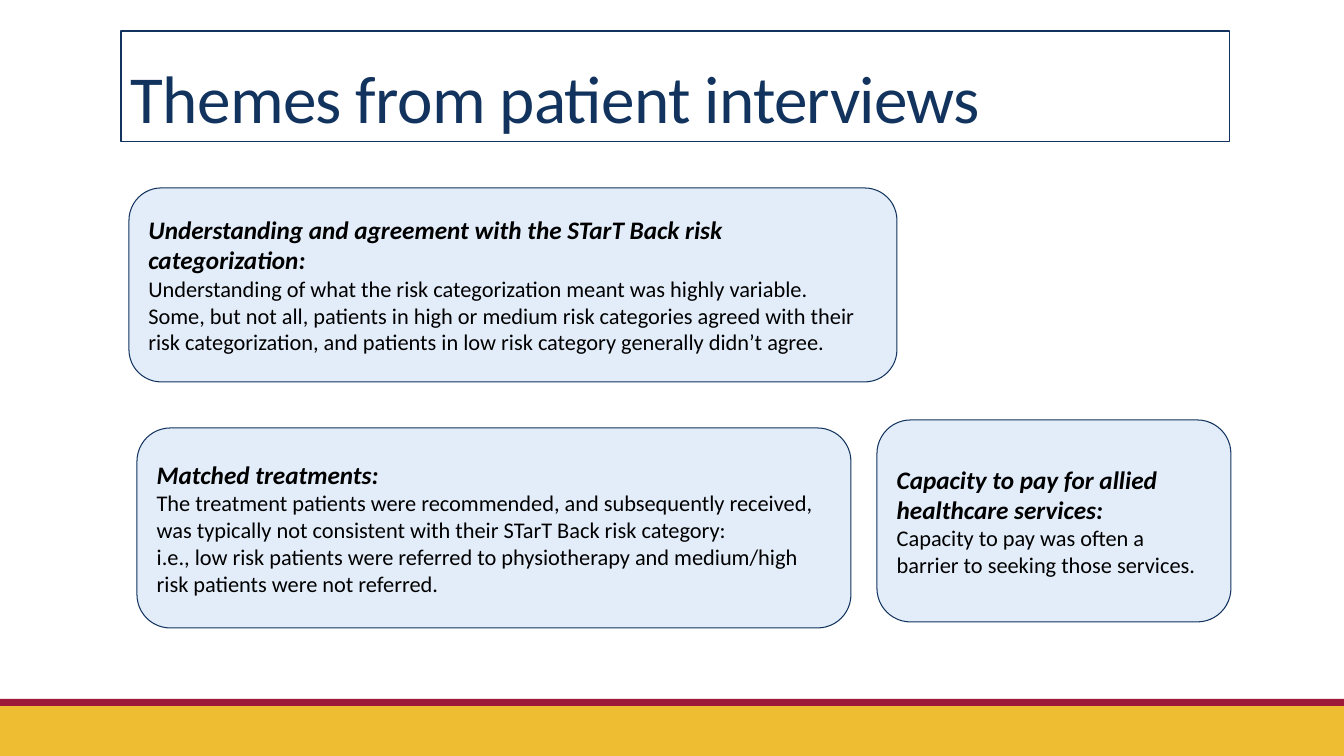
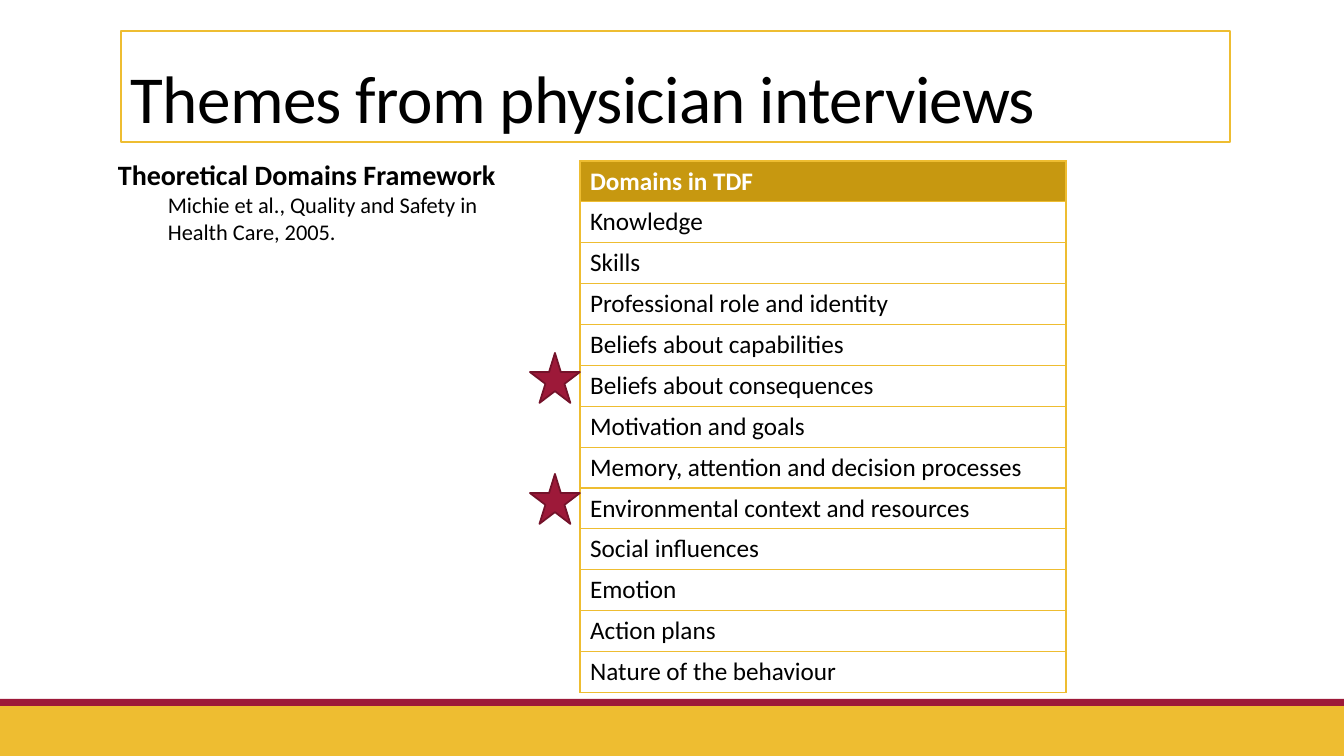
"""Build two slides on the themes from patient and physician interviews."""
from lxml.etree import SubElement
from pptx import Presentation
from pptx.dml.color import RGBColor
from pptx.enum.shapes import MSO_SHAPE
from pptx.enum.text import MSO_ANCHOR, PP_ALIGN
from pptx.oxml.ns import qn
from pptx.util import Emu, Pt

PX = 914400 / 100.8
SLIDE_WIDTH, SLIDE_HEIGHT = 1344, 756
FONT = "Calibri"
GOLD = RGBColor(0xEE, 0xBD, 0x31)
DARK_GOLD = RGBColor(0xC7, 0x98, 0x10)
MAROON = RGBColor(0x9D, 0x19, 0x39)
DARK_MAROON = RGBColor(0x74, 0x12, 0x2A)
NAVY = RGBColor(0x11, 0x33, 0x5D)
PALE_BLUE = RGBColor(0xBB, 0xD4, 0xF3)
BLACK = RGBColor(0, 0, 0)
WHITE = RGBColor(0xFF, 0xFF, 0xFF)

THEMES = [
    ((129, 188, 768, 194), [
        "Understanding and agreement with the STarT Back risk categorization:",
        "Understanding of what the risk categorization meant was highly variable.",
        "Some, but not all, patients in high or medium risk categories agreed with their "
        "risk categorization, and patients in low risk category generally didn’t agree.",
    ]),
    ((137, 428, 714, 200), [
        "Matched treatments:",
        "The treatment patients were recommended, and subsequently received, "
        "was typically not consistent with their STarT Back risk category:",
        "i.e., low risk patients were referred to physiotherapy and medium/high "
        "risk patients were not referred.",
    ]),
    ((877, 420, 354, 202), [
        "Capacity to pay for allied healthcare services:",
        "Capacity to pay was often a barrier to seeking those services.",
    ]),
]
DOMAINS = [
    "Domains in TDF",
    "Knowledge",
    "Skills",
    "Professional role and identity",
    "Beliefs about capabilities",
    "Beliefs about consequences",
    "Motivation and goals",
    "Memory, attention and decision processes",
    "Environmental context and resources",
    "Social influences",
    "Emotion",
    "Action plans",
    "Nature of the behaviour",
]
REFERENCE = [
    "Theoretical Domains Framework",
    "Michie et al., Quality and Safety in Health Care, 2005.",
]


def add_shape(slide, preset, place, fill=None, line=None, line_width=0.75):
    """Add a preset shape; without a colour, the fill or line is left out."""
    shape = slide.shapes.add_shape(preset, *[Emu(round(length * PX)) for length in place])
    shape.shadow.inherit = False
    if fill is None:
        shape.fill.background()
    else:
        shape.fill.solid()
        shape.fill.fore_color.rgb = fill
    if line is None:
        shape.line.fill.background()
    else:
        shape.line.color.rgb = line
        shape.line.width = Pt(line_width)
    return shape


def add_titled_slide(title, text_color, line, line_width):
    """Add a slide with the footer bands and a framed title."""
    slide = presentation.slides.add_slide(presentation.slide_layouts[6])
    add_shape(slide, MSO_SHAPE.RECTANGLE, (0, 706, SLIDE_WIDTH, 50), GOLD)
    add_shape(slide, MSO_SHAPE.RECTANGLE, (0, 699, SLIDE_WIDTH, 7), MAROON)
    frame = add_shape(slide, MSO_SHAPE.RECTANGLE, (121, 31, 1109, 111), None, line, line_width)
    frame.text_frame.word_wrap = True
    frame.text_frame.vertical_anchor = MSO_ANCHOR.BOTTOM
    paragraph = frame.text_frame.paragraphs[0]
    paragraph.text = title
    paragraph.alignment = PP_ALIGN.LEFT
    paragraph.line_spacing = 0.85
    paragraph.font.name = FONT
    paragraph.font.size = Pt(48)
    paragraph.font.color.rgb = text_color
    paragraph.runs[0]._r.get_or_add_rPr().set("spc", "-50")
    return slide


presentation = Presentation()
presentation.slide_width = Emu(round(SLIDE_WIDTH * PX))
presentation.slide_height = Emu(round(SLIDE_HEIGHT * PX))

patient_slide = add_titled_slide("Themes from patient interviews", NAVY, NAVY, 0.75)
for place, texts in THEMES:
    card = add_shape(patient_slide, MSO_SHAPE.ROUNDED_RECTANGLE, place, PALE_BLUE, NAVY)
    fill_color = card._element.spPr.find(qn("a:solidFill")).find(qn("a:srgbClr"))
    SubElement(fill_color, qn("a:alpha"), val="40000")
    card.text_frame.word_wrap = True
    card.text_frame.vertical_anchor = MSO_ANCHOR.MIDDLE
    card.text_frame.text = "\n".join(texts)
    for index, paragraph in enumerate(card.text_frame.paragraphs):
        paragraph.alignment = PP_ALIGN.LEFT
        paragraph.font.name = FONT
        paragraph.font.size = Pt(18 if index == 0 else 16)
        paragraph.font.bold = paragraph.font.italic = index == 0
        paragraph.font.color.rgb = BLACK

physician_slide = add_titled_slide("Themes from physician interviews", BLACK, GOLD, 1.25)
table_place = [Emu(round(length * PX)) for length in (580, 161, 486, 40 * len(DOMAINS))]
table = physician_slide.shapes.add_table(len(DOMAINS), 1, *table_place).table
table.horz_banding = False
for index, domain in enumerate(DOMAINS):
    cell = table.cell(index, 0)
    cell.text = domain
    paragraph = cell.text_frame.paragraphs[0]
    paragraph.font.name = FONT
    paragraph.font.size = Pt(18)
    paragraph.font.bold = index == 0
    paragraph.font.color.rgb = WHITE if index == 0 else BLACK
    cell_properties = cell._tc.get_or_add_tcPr()
    for side in ("a:lnL", "a:lnR", "a:lnT", "a:lnB"):
        border = SubElement(cell_properties, qn(side), w=str(Pt(1)))
        SubElement(SubElement(border, qn("a:solidFill")), qn("a:srgbClr"), val=str(GOLD))
    cell.fill.solid()
    cell.fill.fore_color.rgb = DARK_GOLD if index == 0 else WHITE

reference_place = [Emu(round(length * PX)) for length in (108, 153, 413, 99)]
reference_box = physician_slide.shapes.add_textbox(*reference_place)
reference_box.text_frame.word_wrap = True
reference_box.text_frame.text = "\n".join(REFERENCE)
for index, paragraph in enumerate(reference_box.text_frame.paragraphs):
    paragraph.level = index
    paragraph._p.get_or_add_pPr().set("marL", str(round(index * 50 * PX)))
    paragraph.font.name = FONT
    paragraph.font.size = Pt(20 if index == 0 else 16)
    paragraph.font.bold = index == 0
    paragraph.font.color.rgb = BLACK

for star_top in (353, 474):
    add_shape(physician_slide, MSO_SHAPE.STAR_5_POINT, (530, star_top, 50, 50),
              MAROON, DARK_MAROON, 1.25)

presentation.save("out.pptx")
